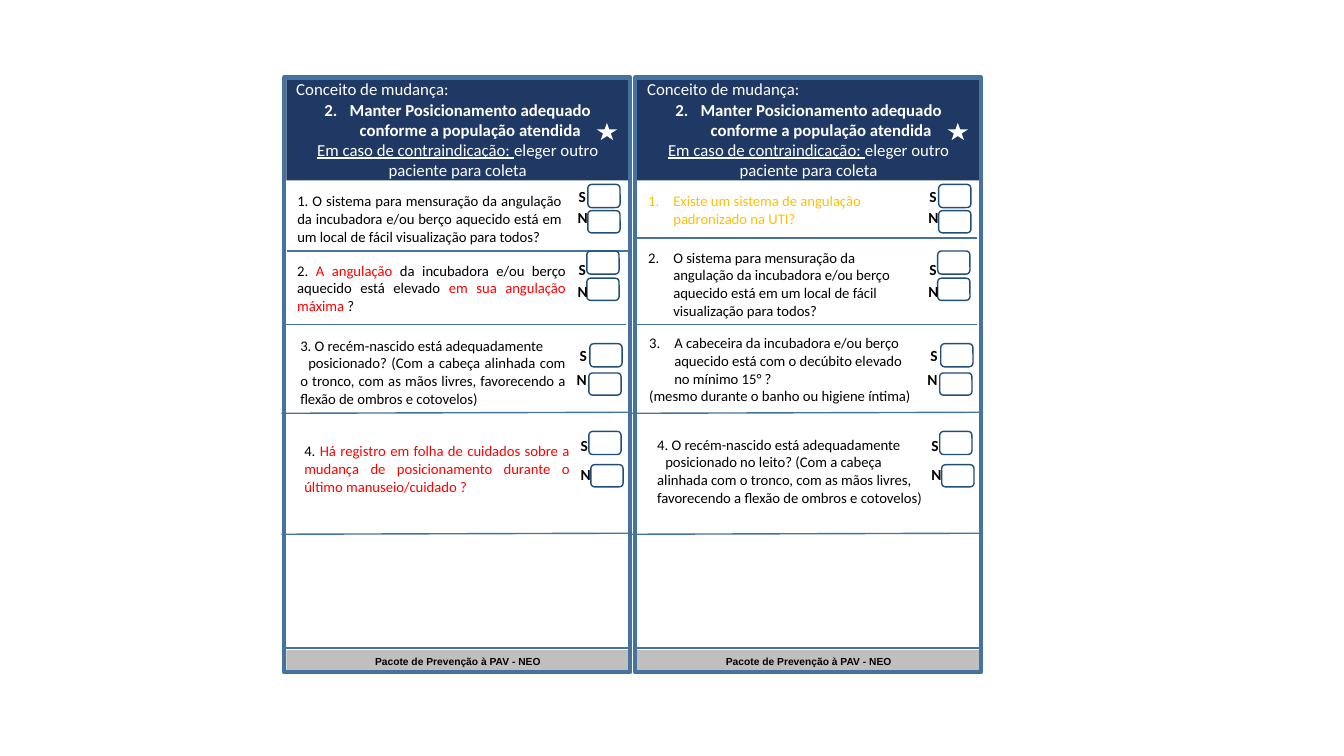
from lxml import etree
from pptx import Presentation
from pptx import util as u
from pptx.dml.color import RGBColor
from pptx.enum import shapes, text
from pptx.oxml.ns import qn

NAVY = RGBColor(0x20, 0x38, 0x64)
BLUE = RGBColor(0x43, 0x73, 0x9E)
BOX_BLUE = RGBColor(0x1F, 0x4E, 0x79)
GRAY = RGBColor(0xBF, 0xBF, 0xBF)
WHITE = RGBColor(0xFF, 0xFF, 0xFF)
BLACK = RGBColor(0x00, 0x00, 0x00)
RED = RGBColor(0xFF, 0x00, 0x00)
GOLD = RGBColor(0xFF, 0xC0, 0x00)

PX = 9144  # 100 px to the inch
LEFT, CENTER, JUSTIFY = text.PP_ALIGN.LEFT, text.PP_ALIGN.CENTER, text.PP_ALIGN.JUSTIFY
SHAPE = shapes.MSO_SHAPE


class Card:
    """Drawing style and the page being drawn on."""

    def __init__(self, page):
        self.page = page

    def shape(self, kind, x, y, w, h, fill=None, line=None, weight=1):
        box = self.page.shapes.add_shape(kind, x * PX, y * PX, w * PX, h * PX)
        box.shadow.inherit = False
        if fill is None:
            box.fill.background()
        else:
            box.fill.solid()
            box.fill.fore_color.rgb = fill
        if line is None:
            box.line.fill.background()
        else:
            box.line.color.rgb = line
            box.line.width = u.Pt(weight)
        return box

    def rule(self, x1, y1, x2, y2):
        rule = self.page.shapes.add_connector(
            shapes.MSO_CONNECTOR.STRAIGHT, x1 * PX, y1 * PX, x2 * PX, y2 * PX)
        rule.line.color.rgb = BLUE
        rule.line.width = u.Pt(1)
        etree.SubElement(rule._element.spPr, qn("a:effectLst"))

    def text_box(self, x, y, w, h, paras, lift=0, **style):
        box = self.page.shapes.add_textbox(x * PX, y * PX, w * PX, h * PX)
        self.fill_text(box, paras, **style)
        box.text_frame.margin_bottom = (5 + lift) * PX

    def fill_text(self, box, paras, **style):
        """Fill a box; each paragraph is (spans, options)."""
        frame = box.text_frame
        frame.word_wrap = True
        frame.vertical_anchor = text.MSO_ANCHOR.MIDDLE
        for index, (spans, options) in enumerate(paras):
            para = frame.paragraphs[0] if index == 0 else frame.add_paragraph()
            self.paragraph(para, spans, **{**style, **options})

    def paragraph(self, para, spans, size=10.5, color=BLACK, bold=False,
                  font="Calibri", align=LEFT, number=None, first=0):
        para.alignment = align
        props = para._p.get_or_add_pPr()
        if number:
            props.set("marL", str(25 * PX))
            props.set("indent", str(-25 * PX))
            etree.SubElement(props, qn("a:buAutoNum"),
                             type="arabicPeriod", startAt=str(number))
        elif first:
            props.set("indent", str(first * PX))
        para.font.name = font
        para.font.size = u.Pt(size)
        para.font.bold = bold
        para.font.color.rgb = color
        for words, look in spans:
            span = para.add_run()
            span.text = words
            if look == "underline":
                span.font.underline = True
            elif look is not None:
                span.font.color.rgb = look


def plain(words, **options):
    return [(words, None)], options


HEADER = [
    plain("Conceito de mudança:", align=LEFT),
    plain("Manter Posicionamento adequado conforme a população atendida",
          bold=True, number=2),
    ([("Em caso de contraindicação: ", "underline"),
      ("eleger outro paciente para coleta", None)], {}),
]

# Questions: x within the panel, y, width, height, alignment, lift, paragraphs
LEFT_QUESTIONS = [
    (3, 185, 282, 64, JUSTIFY, 0, [plain(
        "1. O sistema para mensuração da angulação da incubadora e/ou berço "
        "aquecido está em um local de fácil visualização para todos?")]),
    (3, 267, 286, 55, JUSTIFY, 18, [([
        ("2. ", None), ("A angulação ", RED),
        ("da incubadora e/ou berço aquecido está elevado ", None),
        ("em sua angulação máxima ", RED), ("?", None)], {})]),
    (6, 326, 283, 86, JUSTIFY, 0, [
        plain("3. O recém-nascido está adequadamente"),
        plain("posicionado? (Com a cabeça alinhada com o tronco, com as mãos "
              "livres, favorecendo a flexão de ombros e cotovelos)", first=8)]),
    (10, 422, 283, 86, JUSTIFY, 0, [([
        ("4. ", None),
        ("Há registro em folha de cuidados sobre a mudança de posicionamento "
         "durante o último manuseio/cuidado ?", RED)], {})]),
]
RIGHT_QUESTIONS = [
    (3, 176, 282, 64, LEFT, 0, [plain(
        "Existe um sistema de angulação padronizado na UTI?",
        number=1, color=GOLD)]),
    (3, 263, 286, 55, LEFT, 18, [plain(
        "O sistema para mensuração da angulação da incubadora e/ou berço "
        "aquecido está em um local de fácil visualização para todos?", number=2)]),
    (4, 338, 283, 75, LEFT, 18, [
        plain("A cabeceira da incubadora e/ou berço aquecido está com o "
              "decúbito elevado no mínimo 15° ?", number=3),
        plain("(mesmo durante o banho ou higiene íntima)")]),
    (12, 424, 283, 86, LEFT, 0, [
        plain("4. O recém-nascido está adequadamente"),
        plain("posicionado no leito? (Com a cabeça alinhada com o tronco, com as "
              "mãos livres, favorecendo a flexão de ombros e cotovelos)", first=8)]),
]

# Answers: letter, box x and y, label x and y, all x within the panel
ANSWERS = [
    ("S", 301, 183, 282, 186), ("N", 301, 209, 281, 209),
    ("S", 300, 249, 282, 259), ("N", 300, 276, 281, 282),
    ("S", 303, 341, 283, 344), ("N", 302, 370, 280, 369),
    ("S", 302, 428, 284, 433), ("N", 304, 461, 284, 464),
]
RULES = [(0, 322, 339, 322), (-3, 410, 345, 409),
         (-3, 530, 345, 529), (0, 643, 344, 643)]


def draw_panel(card, left, first_rule, questions):
    # Footer and header bands
    footer = card.shape(SHAPE.RECTANGLE, left + 2, 645, 340, 22, fill=GRAY)
    card.fill_text(footer, [plain("Pacote de Prevenção à PAV - NEO")],
                   size=7.3, font="Arial", bold=True, align=CENTER)
    header = card.shape(SHAPE.RECTANGLE, left + 2, 78, 340, 101, fill=NAVY)
    card.fill_text(header, HEADER, size=12, color=WHITE, align=CENTER)
    card.shape(SHAPE.STAR_5_POINT, left + 310, 122, 20, 17, fill=WHITE)

    # Frame and dividers
    card.shape(SHAPE.RECTANGLE, left, 77, 343, 590, line=BLUE, weight=3)
    for x1, y1, x2, y2 in [first_rule] + RULES:
        card.rule(left + x1, y1, left + x2, y2)

    # Questions
    for x, y, w, h, align, lift, paras in questions:
        card.text_box(left + x, y, w, h, paras, lift=lift, align=align)

    # Yes and no boxes
    for letter, box_x, box_y, label_x, label_y in ANSWERS:
        height, label_height = (23, 17) if letter == "S" else (22, 14)
        card.shape(SHAPE.ROUNDED_RECTANGLE, left + box_x, box_y, 32, height,
                   line=BOX_BLUE)
        card.text_box(left + label_x, label_y, 24, label_height, [plain(letter)],
                      size=11, bold=True, align=CENTER)


def main():
    deck = Presentation()
    deck.slide_width, deck.slide_height = 1333 * PX, 750 * PX
    card = Card(deck.slides.add_slide(deck.slide_layouts[6]))
    draw_panel(card, 282, (3, 249, 343, 249), LEFT_QUESTIONS)
    draw_panel(card, 630, (0, 236, 339, 236), RIGHT_QUESTIONS)
    deck.save("out.pptx")


if __name__ == "__main__":
    main()
